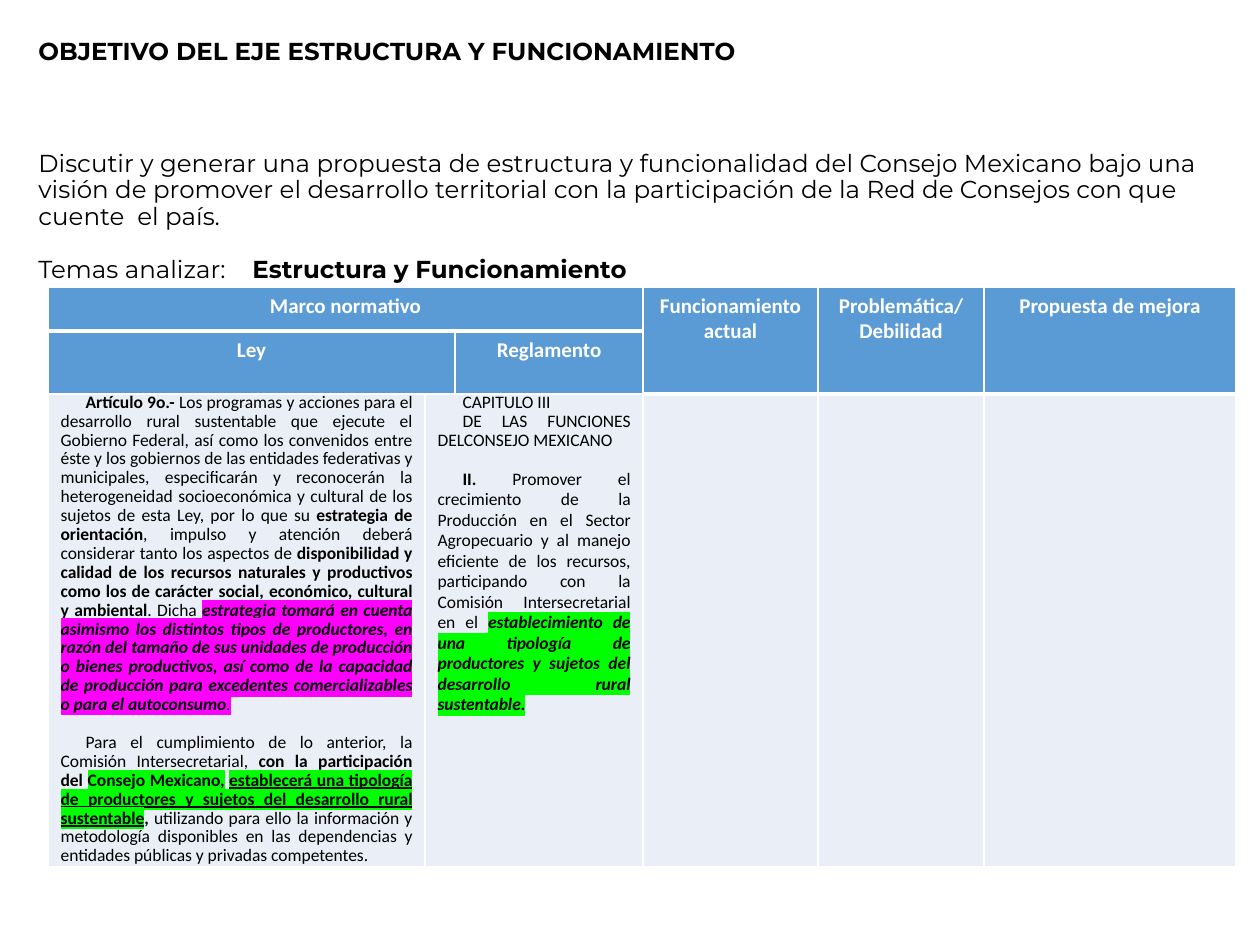
import pptx
import pptx.dml.color
import pptx.enum.text
import pptx.oxml
import pptx.oxml.ns
import pptx.util
from dataclasses import dataclass

EMU_PER_PX = 914400 / 126
ALIGN = pptx.enum.text.PP_ALIGN


@dataclass(frozen=True)
class Theme:
    heading_font: str = "Montserrat"
    table_font: str = "Calibri"
    heading_size: int = 14
    header_size: int = 12
    cell_size: int = 10
    text: str = "000000"
    white: str = "FFFFFF"
    header_fill: str = "5B9BD5"
    cell_fill: str = "EAEFF7"
    magenta: str = "FF00FF"
    green: str = "00FF00"


THEME = Theme()

COLUMNS = [377, 21, 188, 175, 166, 252]
ROWS = [44, 63, 463]
# (row, column, rows spanned, columns spanned, text)
HEADERS = [
    (0, 0, 1, 3, "Marco normativo"),
    (0, 3, 2, 1, "Funcionamiento actual"),
    (0, 4, 2, 1, "Problemática/Debilidad"),
    (0, 5, 2, 1, "Propuesta de mejora"),
    (1, 0, 1, 2, "Ley"),
    (1, 2, 1, 1, "Reglamento"),
]

# Each paragraph: line spacing, space before, runs of (text, style letters, highlight)
LAW = [
    (10.8, 0, [
        ("Artículo 9o.- ", "b", None),
        ("Los programas y acciones para el desarrollo rural sustentable que ejecute el Gobierno "
         "Federal, así como los convenidos entre éste y los gobiernos de las entidades federativas "
         "y municipales, especificarán y reconocerán la heterogeneidad socioeconómica y cultural "
         "de los sujetos de esta Ley, por lo que su ", "", None),
        ("estrategia de orientación", "b", None),
        (", impulso y atención deberá considerar tanto los aspectos de ", "", None),
        ("disponibilidad y calidad de los recursos naturales y productivos como los de carácter "
         "social, económico, cultural y ambiental", "b", None),
        (". Dicha ", "", None),
        ("estrategia tomará en cuenta asimismo los distintos tipos de productores, en razón del "
         "tamaño de sus unidades de producción o bienes productivos, así como de la capacidad de "
         "producción para excedentes comercializables o para el autoconsumo", "bi", THEME.magenta),
        (".", "i", THEME.magenta),
    ]),
    (10.8, 10.8, [
        ("Para el cumplimiento de lo anterior, la Comisión Intersecretarial, ", "", None),
        ("con la participación del ", "b", None),
        ("Consejo Mexicano,", "b", THEME.green),
        (" ", "b", None),
        ("establecerá una tipología de productores y sujetos del desarrollo rural sustentable",
         "bu", THEME.green),
        (",", "b", None),
        (" utilizando para ello la información y metodología disponibles en las dependencias y "
         "entidades públicas y privadas competentes.", "", None),
    ]),
]
REGULATION = [
    (10.8, 0, [("CAPITULO III", "", None)]),
    (10.8, 0, [("DE LAS FUNCIONES DELCONSEJO MEXICANO", "", None)]),
    (11.7, 10.8, [
        ("II. ", "b", None),
        ("Promover el crecimiento de la Producción en el Sector Agropecuario y al manejo eficiente "
         "de los recursos, participando con la Comisión Intersecretarial en el ", "", None),
        ("establecimiento de una tipología de productores y sujetos del desarrollo rural "
         "sustentable.", "bi", THEME.green),
    ]),
]


def px(length):
    return pptx.util.Emu(round(length * EMU_PER_PX))


def rgb(color):
    return pptx.dml.color.RGBColor.from_string(color)


def xml(tag, **attributes):
    element = pptx.oxml.parse_xml(f"<{tag} {pptx.oxml.ns.nsdecls('a')}/>")
    for name, value in attributes.items():
        element.set(name, str(value))
    return element


def add_run(paragraph, text, font, size, color, style="", highlight=None):
    """Style holds any of the letters b, i and u."""
    run = paragraph.add_run()
    run.text = text
    run.font.size = pptx.util.Pt(size)
    run.font.bold = "b" in style
    run.font.italic = "i" in style
    run.font.underline = "u" in style
    run.font.color.rgb = rgb(color)
    if highlight:
        element = xml("a:highlight")
        element.append(xml("a:srgbClr", val=highlight))
        run._r.get_or_add_rPr().append(element)
    run.font.name = font


def add_text(slide, left, top, width, height, paragraphs, gap=0, tab=None):
    """Paragraphs are lists of (text, style) runs, parted by gap points."""
    shape = slide.shapes.add_textbox(px(left), px(top), px(width), px(height))
    frame = shape.text_frame
    frame.word_wrap = True
    for index, runs in enumerate(paragraphs):
        paragraph = frame.paragraphs[0] if index == 0 else frame.add_paragraph()
        paragraph.line_spacing = 0.9
        if index:
            paragraph.space_before = pptx.util.Pt(gap)
        if tab:
            stops = xml("a:tabLst")
            stops.append(xml("a:tab", pos=px(tab), algn="l"))
            paragraph._p.get_or_add_pPr().append(stops)
        for text, style in runs:
            add_run(paragraph, text, THEME.heading_font, THEME.heading_size, THEME.text, style)


def style_cell(cell, fill, bottom_width, top_edge):
    widths = {"a:lnL": 1, "a:lnR": 1, "a:lnT": 1, "a:lnB": bottom_width}
    if not top_edge:
        del widths["a:lnT"]
    properties = cell._tc.get_or_add_tcPr()
    for tag, width in widths.items():
        line = xml(tag, w=pptx.util.Pt(width))
        solid = xml("a:solidFill")
        solid.append(xml("a:srgbClr", val=THEME.white))
        line.append(solid)
        properties.append(line)
    cell.fill.solid()
    cell.fill.fore_color.rgb = rgb(fill)


def fill_legal_cell(cell, paragraphs):
    cell.margin_top = cell.margin_bottom = 0
    for index, (spacing, before, runs) in enumerate(paragraphs):
        frame = cell.text_frame
        paragraph = frame.paragraphs[0] if index == 0 else frame.add_paragraph()
        paragraph.alignment = ALIGN.JUSTIFY
        paragraph.line_spacing = pptx.util.Pt(spacing)
        if before:
            paragraph.space_before = pptx.util.Pt(before)
        paragraph._p.get_or_add_pPr().set("indent", str(px(25)))
        for text, style, highlight in runs:
            add_run(paragraph, text, THEME.table_font, THEME.cell_size, THEME.text,
                    style, highlight)


def add_framework_table(slide, left, top):
    table = slide.shapes.add_table(len(ROWS), len(COLUMNS), px(left), px(top),
                                   px(sum(COLUMNS)), px(sum(ROWS))).table
    table.first_row = table.horz_banding = False
    for column, width in zip(table.columns, COLUMNS):
        column.width = px(width)
    for row, height in zip(table.rows, ROWS):
        row.height = px(height)
    for row in range(len(ROWS)):
        for column in range(len(COLUMNS)):
            fill = THEME.header_fill if row < 2 else THEME.cell_fill
            heavy = row == 0 or (row == 1 and column >= 3)
            style_cell(table.cell(row, column), fill, 3 if heavy else 1, row == 0)
    for row, column, height, width, text in HEADERS:
        cell = table.cell(row, column)
        if height * width > 1:
            cell.merge(table.cell(row + height - 1, column + width - 1))
        paragraph = cell.text_frame.paragraphs[0]
        paragraph.alignment = ALIGN.CENTER
        add_run(paragraph, text, THEME.table_font, THEME.header_size, THEME.white, "b")
    table.cell(2, 1).merge(table.cell(2, 2))
    fill_legal_cell(table.cell(2, 0), LAW)
    fill_legal_cell(table.cell(2, 1), REGULATION)


def main():
    presentation = pptx.Presentation()
    presentation.slide_width, presentation.slide_height = px(1260), px(945)
    slide = presentation.slides.add_slide(presentation.slide_layouts[6])
    add_text(slide, 26, 145, 1201, 366, [
        [("Discutir y generar una propuesta de estructura y funcionalidad del Consejo Mexicano "
          "bajo una visión de promover el desarrollo territorial con la participación de la Red "
          "de Consejos con que cuente  el país.", "")],
        [("Temas analizar:\t", ""), ("Estructura y Funcionamiento", "b")],
    ], gap=15.2, tab=214)
    add_text(slide, 26, 33, 791, 45,
             [[("OBJETIVO DEL EJE ESTRUCTURA Y FUNCIONAMIENTO", "b")]])
    add_framework_table(slide, 48, 287)
    presentation.save("out.pptx")


if __name__ == "__main__":
    main()
